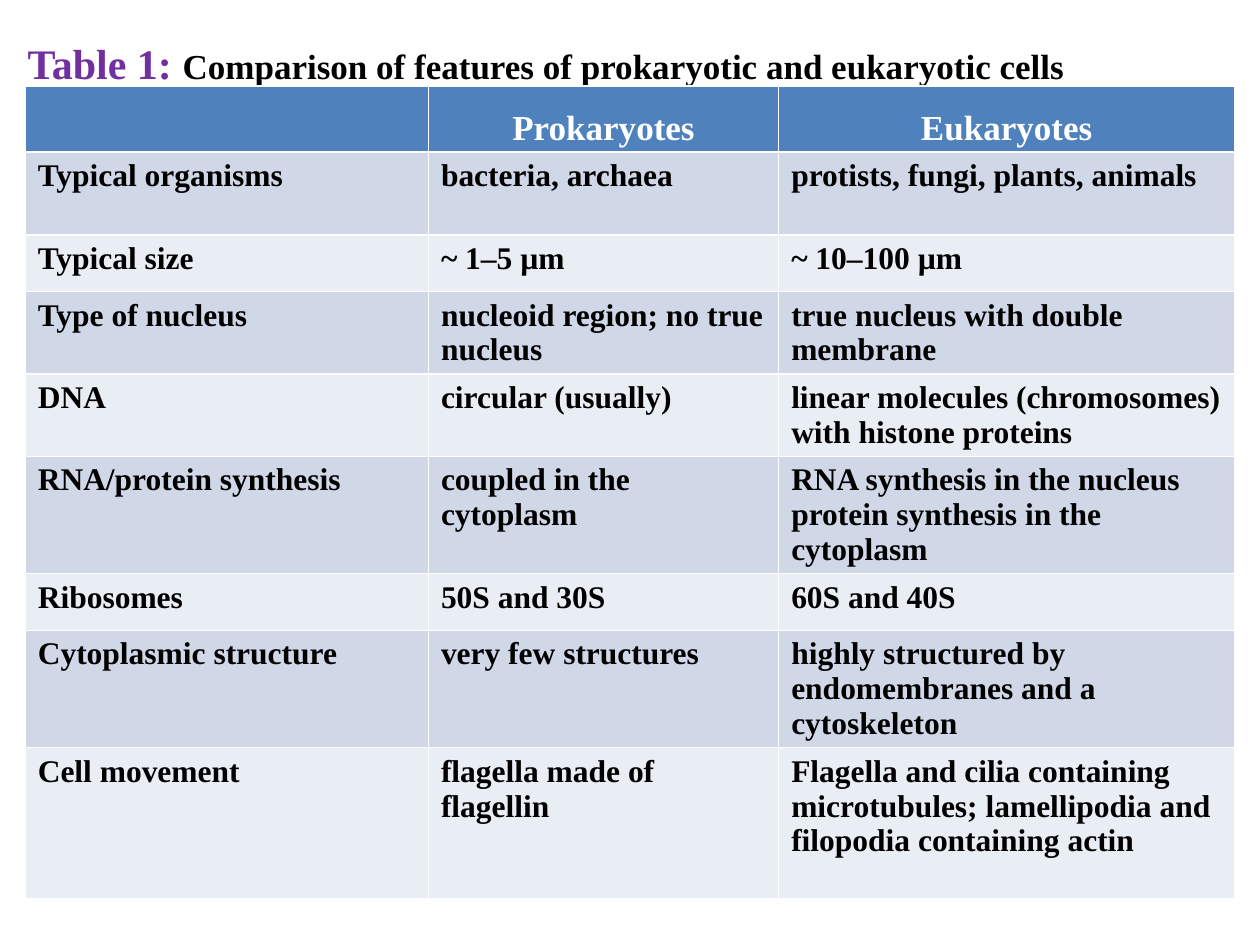
from dataclasses import dataclass

from lxml.etree import SubElement
from pptx import Presentation
from pptx.dml.color import RGBColor
from pptx.enum.text import MSO_ANCHOR, PP_ALIGN
from pptx.oxml.ns import qn
from pptx.util import Inches, Pt


@dataclass(frozen=True)
class Theme:
    font: str = "Times New Roman"
    accent: str = "7030A0"
    ink: str = "000000"
    white: str = "FFFFFF"
    head: str = "4F81BD"
    bands: tuple = ("D0D8E8", "E9EDF4")
    label: int = 24
    title: int = 20
    body: int = 18


THEME = Theme()
WIDTH, HEIGHT = 10, 7.5

# Column widths and row heights of the table, in inches
COLS = (3.2, 2.78, 3.62)
ONE, TWO, THREE = 0.45, 0.65, 0.93
ROWS = (0.52, 0.66, ONE, TWO, TWO, THREE, ONE, THREE, 1.2)

HEADS = ("", "Prokaryotes", "Eukaryotes")
FACTS = (
    ("Typical organisms", "bacteria, archaea", "protists, fungi, plants, animals"),
    ("Typical size", "~ 1–5 µm", "~ 10–100 µm"),
    ("Type of nucleus", "nucleoid region; no true nucleus",
     "true nucleus with double membrane"),
    ("DNA", "circular (usually)",
     "linear molecules (chromosomes) with histone proteins"),
    ("RNA/protein synthesis", "coupled in the cytoplasm",
     "RNA synthesis in the nucleus\nprotein synthesis in the cytoplasm"),
    ("Ribosomes", "50S and 30S", "60S and 40S"),
    ("Cytoplasmic structure", "very few structures",
     "highly structured by endomembranes and a cytoskeleton"),
    ("Cell movement", "flagella made of flagellin",
     "Flagella and cilia containing microtubules; "
     "lamellipodia and filopodia containing actin"),
)


def place(x, y, w, h):
    """Turn shares of the slide into left, top, width and height."""
    return (Inches(WIDTH * x), Inches(HEIGHT * y),
            Inches(WIDTH * w), Inches(HEIGHT * h))


def style(font, size, color):
    font.name = THEME.font
    font.size = Pt(size)
    font.bold = True
    font.color.rgb = RGBColor.from_string(color)


def add_caption(slide):
    """Fill the body placeholder with the two-part caption."""
    box = slide.placeholders[1]
    box.left, box.top, box.width, box.height = place(0.012, 0.033, 0.976, 0.95)
    para = box.text_frame.paragraphs[0]
    props = para._p.get_or_add_pPr()
    props.set("marL", "0")
    props.set("indent", "0")
    SubElement(props, qn("a:buNone"))
    para.space_before = Pt(0)
    parts = (("Table 1: ", THEME.label, THEME.accent),
             ("Comparison of features of prokaryotic and eukaryotic cells",
              THEME.title, THEME.ink))
    for text, size, color in parts:
        run = para.add_run()
        run.text = text
        style(run.font, size, color)


def fill_cell(cell, text, fill, size, color):
    cell.fill.solid()
    cell.fill.fore_color.rgb = RGBColor.from_string(fill)
    cell.text = text
    for para in cell.text_frame.paragraphs:
        style(para.font, size, color)


def format_head(cell):
    """Centre a heading and give it narrow margins."""
    cell.vertical_anchor = MSO_ANCHOR.MIDDLE
    cell.margin_left = cell.margin_right = Inches(0.07)
    cell.margin_top = cell.margin_bottom = Inches(0.03)
    para = cell.text_frame.paragraphs[0]
    para.alignment = PP_ALIGN.CENTER
    para.line_spacing = 1.5


def add_facts(slide):
    """Add the comparison table with a heading row and banded rows."""
    spot = place(0.02, 0.091, sum(COLS) / WIDTH, sum(ROWS) / HEIGHT)
    table = slide.shapes.add_table(len(ROWS), len(COLS), *spot).table
    for col, width in zip(table.columns, COLS):
        col.width = Inches(width)
    for row, height in zip(table.rows, ROWS):
        row.height = Inches(height)

    for col, text in enumerate(HEADS):
        cell = table.cell(0, col)
        fill_cell(cell, text, THEME.head, THEME.title, THEME.white)
        format_head(cell)
    for row, facts in enumerate(FACTS):
        band = THEME.bands[row % 2]
        for col, text in enumerate(facts):
            fill_cell(table.cell(row + 1, col), text, band, THEME.body, THEME.ink)


def main():
    deck = Presentation()
    deck.slide_width, deck.slide_height = Inches(WIDTH), Inches(HEIGHT)
    slide = deck.slides.add_slide(deck.slide_layouts[1])
    title = slide.shapes.title._element
    title.getparent().remove(title)
    add_caption(slide)
    add_facts(slide)
    deck.save("out.pptx")


if __name__ == "__main__":
    main()
